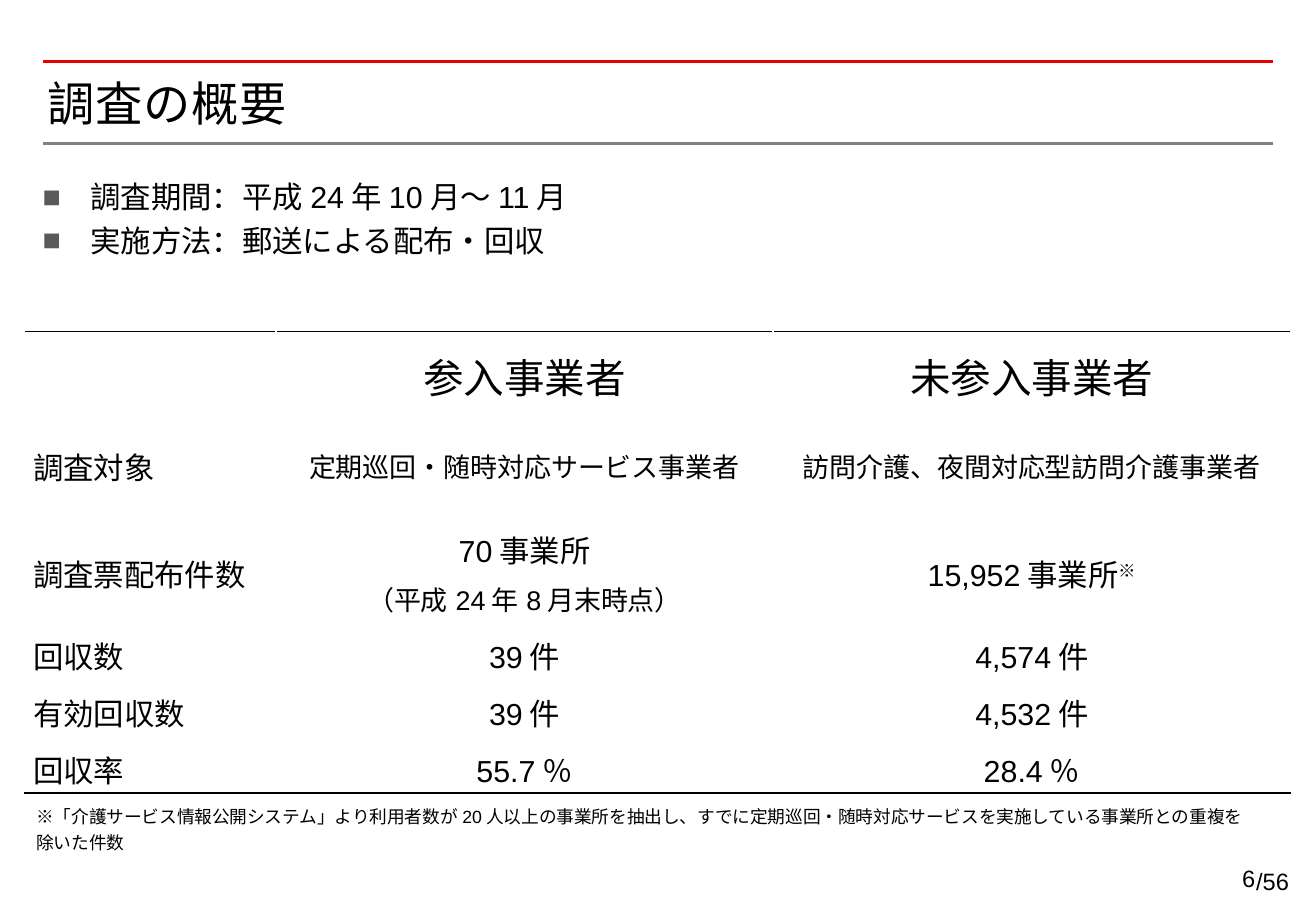
from dataclasses import dataclass

from lxml import etree
from pptx import Presentation
from pptx.dml.color import RGBColor
from pptx.enum import shapes, text
from pptx.oxml import ns
from pptx.util import Cm, Pt

BLACK = RGBColor(0x00, 0x00, 0x00)
RED = RGBColor(0xE6, 0x00, 0x00)
GRAY = RGBColor(0x80, 0x80, 0x80)
MARK = RGBColor(0x5A, 0x5A, 0x5A)
LATIN = "Arial"
ASIAN = "Noto Sans CJK JP"
ALIGN = text.PP_ALIGN
MIDDLE = text.MSO_ANCHOR.MIDDLE


@dataclass
class Run:
    words: str
    size: float = 18
    font: str = LATIN
    track: int = 0
    raised: int = 0
    breaks: bool = False


@dataclass
class Box:
    left: float
    top: float
    width: float
    height: float
    lines: list[list[Run]]
    inset: tuple[float, float, float, float] = (0.25, 0.13, 0.25, 0.13)
    align: ALIGN = ALIGN.LEFT
    anchor: text.MSO_ANCHOR = text.MSO_ANCHOR.TOP
    pitch: float = 1.2
    bullet: bool = False


@dataclass
class Rule:
    y: float
    color: RGBColor
    weight: float


RULES = [Rule(1.28, RED, 2), Rule(3, GRAY, 1.25)]
BOXES = [
    Box(26.01, 17.88, 1.24, 0.91, [[Run("/56", 14)]]),
    Box(25, 17.93, 1.24, 0.86, [[Run("6", 14)]], (0, 0.13, 0, 0.13), ALIGN.RIGHT, pitch=1),
    Box(0.99, 1.45, 25.63, 1.42, [[Run("調査の概要", 28, ASIAN, 50)]],
        (0, 0.1, 0, 0.13), anchor=MIDDLE, pitch=1),
    Box(0.89, 3.58, 25.68, 2.95,
        [[Run("調査期間：平成24年10月～11月")], [Run("実施方法：郵送による配布・回収")]],
        (0, 0, 0, 0), bullet=True),
    Box(0.51, 16.64, 26.06, 0.79, [[Run(
        "※「介護サービス情報公開システム」より利用者数が20人以上の事業所を抽出し、"
        "すでに定期巡回・随時対応サービスを実施している事業所との重複を除いた件数", 10.5)]]),
]
COLS = [5.26, 10.39, 10.82]
ROWS = [1.6, 2.24, 2.24, 1.19, 1.19, 1.19]
CELLS = [
    [[], [Run("参入事業者", 24)], [Run("未参入事業者", 24)]],
    [[Run("調査対象")], [Run("定期巡回・随時対応サービス事業者", 16)],
     [Run("訪問介護、夜間対応型訪問介護事業者", 16)]],
    [[Run("調査票配布件数")],
     [Run("70事業所", breaks=True), Run("（平成24年8月末時点）", 16)],
     [Run("15,952事業所"), Run("※", raised=30000)]],
    [[Run("回収数")], [Run("39件")], [Run("4,574件")]],
    [[Run("有効回収数")], [Run("39件")], [Run("4,532件")]],
    [[Run("回収率")], [Run("55.7％")], [Run("28.4％")]],
]


def add_tag(parent, name: str, **attrs: str):
    return etree.SubElement(parent, ns.qn(name), attrs)


def add_runs(para, runs: list[Run]) -> None:
    for item in runs:
        run = para.add_run()
        run.text = item.words
        run.font.size = Pt(item.size)
        run.font.name = item.font
        run.font.bold = False
        run.font.color.rgb = BLACK
        props = run._r.get_or_add_rPr()
        add_tag(props, "a:ea", typeface=ASIAN)
        if item.track:
            props.set("spc", str(item.track))
        if item.raised:
            props.set("baseline", str(item.raised))
        if item.breaks:
            para.add_line_break()


def add_bullet(para) -> None:
    props = para._p.get_or_add_pPr()
    props.set("marL", str(Cm(1)))
    props.set("indent", str(Cm(-1)))
    add_tag(add_tag(props, "a:buClr"), "a:srgbClr", val=str(MARK))
    add_tag(props, "a:buFont", typeface=LATIN)
    add_tag(props, "a:buChar", char="■")


def draw_box(slide, box: Box) -> None:
    place = [Cm(n) for n in (box.left, box.top, box.width, box.height)]
    frame = slide.shapes.add_textbox(*place).text_frame
    frame.word_wrap = True
    frame.vertical_anchor = box.anchor
    (frame.margin_left, frame.margin_top,
     frame.margin_right, frame.margin_bottom) = [Cm(n) for n in box.inset]
    for index, runs in enumerate(box.lines):
        para = frame.add_paragraph() if index else frame.paragraphs[0]
        para.line_spacing = box.pitch
        para.alignment = box.align
        if box.bullet:
            add_bullet(para)
        add_runs(para, runs)


def draw_rule(slide, rule: Rule) -> None:
    line = slide.shapes.add_connector(
        shapes.MSO_CONNECTOR.STRAIGHT, Cm(0.89), Cm(rule.y), Cm(26.62), Cm(rule.y))
    line.line.color.rgb = rule.color
    line.line.width = Pt(rule.weight)
    add_tag(line._element.spPr, "a:effectLst")


def add_edge(cell, side: str) -> None:
    edge = add_tag(cell._tc.get_or_add_tcPr(), side, w=str(Pt(1)))
    add_tag(add_tag(edge, "a:solidFill"), "a:srgbClr", val=str(BLACK))


def draw_table(slide) -> None:
    table = slide.shapes.add_table(
        len(ROWS), len(COLS), Cm(0.51), Cm(6.93), Cm(sum(COLS)), Cm(sum(ROWS))).table
    table.first_row = False
    table.horz_banding = False
    for col, width in zip(table.columns, COLS):
        col.width = Cm(width)
    for row, height in zip(table.rows, ROWS):
        row.height = Cm(height)
    for y, row in enumerate(CELLS):
        for x, runs in enumerate(row):
            cell = table.cell(y, x)
            cell.vertical_anchor = MIDDLE
            cell.margin_left = cell.margin_right = Cm(0.18)
            cell.margin_top = cell.margin_bottom = 0
            if y == 0:
                add_edge(cell, "a:lnT")
            if y == len(ROWS) - 1:
                add_edge(cell, "a:lnB")
            cell.fill.background()
            para = cell.text_frame.paragraphs[0]
            para.alignment = ALIGN.CENTER if x else ALIGN.JUSTIFY
            para.line_spacing = 1.2
            add_runs(para, runs)


def main() -> None:
    deck = Presentation()
    deck.slide_width, deck.slide_height = Cm(27.51), Cm(19.05)
    slide = deck.slides.add_slide(deck.slide_layouts[6])
    for rule in RULES:
        draw_rule(slide, rule)
    for box in BOXES:
        draw_box(slide, box)
    draw_table(slide)
    deck.save("out.pptx")


if __name__ == "__main__":
    main()
